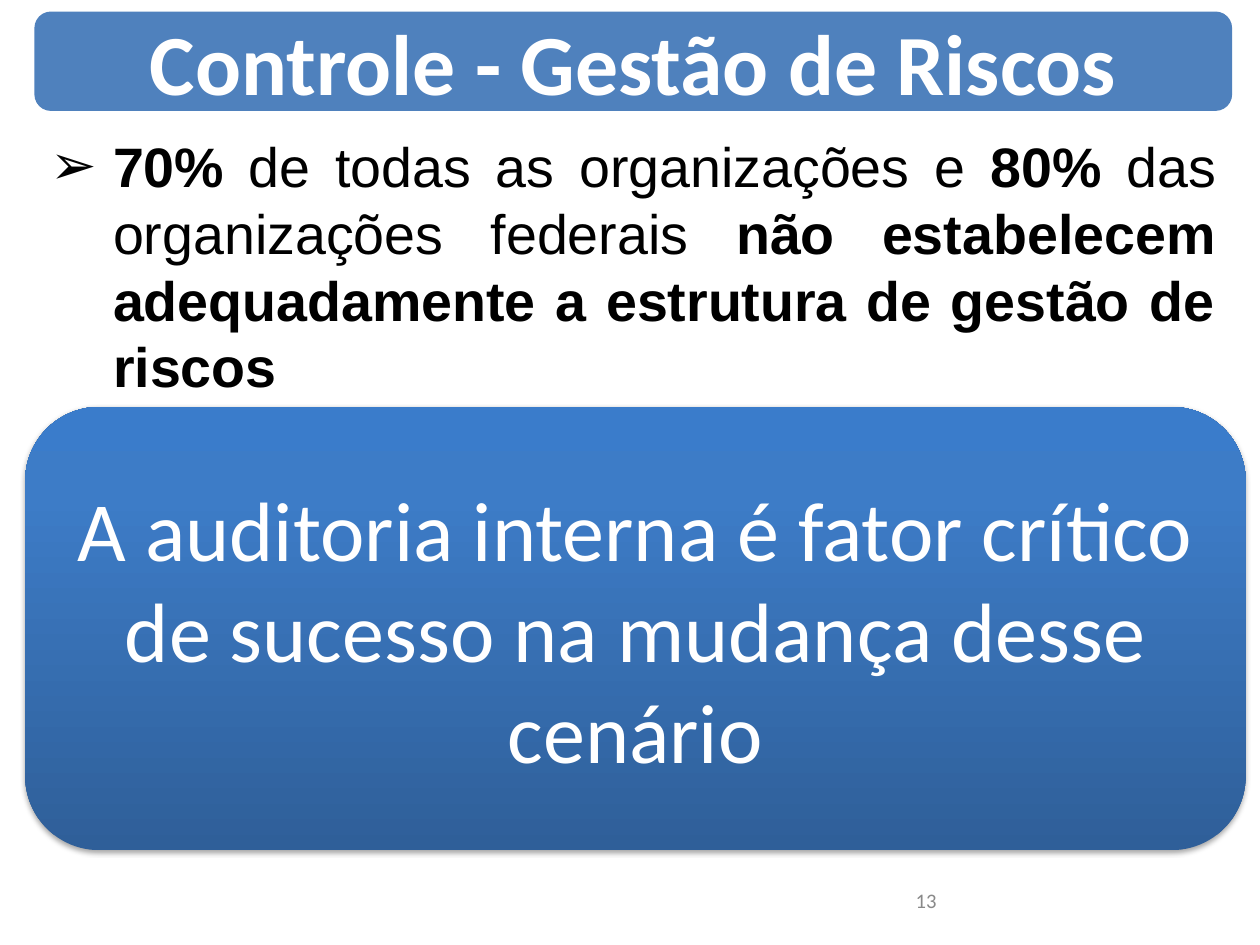
from dataclasses import dataclass

from lxml import etree
from pptx import Presentation
from pptx import util as u
from pptx.dml.color import RGBColor
from pptx.enum import shapes, text
from pptx.oxml.ns import qn


@dataclass(frozen=True)
class Theme:
    bar: str = "4F81BD"
    gradient: tuple = ((0, "2F5F99"), (80, "3D7CC7"), (100, "3A7CCB"))
    light: str = "FFFFFF"
    dark: str = "000000"
    muted: str = "898989"
    heading: str = "Calibri"
    body: str = "Arial"
    title_size: int = 54
    callout_size: int = 53
    body_size: int = 35
    number_size: int = 13


def add(parent, tag, **attrs):
    return etree.SubElement(parent, qn(tag), {k: str(v) for k, v in attrs.items()})


def write(tf, runs, font, size, color, align=text.PP_ALIGN.LEFT,
          anchor=text.MSO_ANCHOR.MIDDLE, bullet=None, indent=0, after=0):
    tf.word_wrap = True
    tf.vertical_anchor = anchor
    tf.margin_left = tf.margin_right = u.Inches(0.11)
    tf.margin_top = tf.margin_bottom = u.Inches(0.06)
    p = tf.paragraphs[0]
    p.alignment = align
    if after:
        p.space_after = u.Pt(after)
    if bullet:
        pPr = p._p.get_or_add_pPr()
        pPr.set("marL", str(u.Inches(indent)))
        pPr.set("indent", str(-u.Inches(indent)))
        add(pPr, "a:buFont", typeface=font)
        add(pPr, "a:buChar", char=bullet)
    for words, bold in runs:
        r = p.add_run()
        r.text = words
        r.font.name, r.font.size, r.font.bold = font, u.Pt(size), bold
        r.font.color.rgb = RGBColor.from_string(color)


class Deck:
    """Place styled elements on a slide divided into 100 columns and 100 rows."""

    def __init__(self, prs, theme):
        self.t = theme
        self.col, self.row = prs.slide_width / 100, prs.slide_height / 100
        self.s = prs.slides.add_slide(prs.slide_layouts[6])

    def box(self, left, top, width, height):
        return (round(left * self.col), round(top * self.row),
                round(width * self.col), round(height * self.row))

    def text(self, grid, runs, **fmt):
        sp = self.s.shapes.add_textbox(*self.box(*grid))
        write(sp.text_frame, runs, **fmt)

    def panel(self, grid, words, size, bold=False):
        sp = self.s.shapes.add_shape(
            shapes.MSO_SHAPE.ROUNDED_RECTANGLE, *self.box(*grid))
        sp.shadow.inherit = False
        sp.line.fill.background()
        sp.fill.solid()
        sp.fill.fore_color.rgb = RGBColor.from_string(self.t.bar)
        write(sp.text_frame, [(words, bold)], self.t.heading, size,
              self.t.light, align=text.PP_ALIGN.CENTER)
        return sp

    def callout(self, grid, words, size):
        sp = self.panel(grid, words, size)
        sp.fill.gradient()
        sp.fill.gradient_angle = 90
        spPr = sp._element.spPr
        stops = spPr.find(qn("a:gradFill")).find(qn("a:gsLst"))
        for gs in list(stops):
            stops.remove(gs)
        for pos, color in self.t.gradient:
            add(add(stops, "a:gs", pos=pos * 1000), "a:srgbClr", val=color)
        shadow = add(spPr.find(qn("a:effectLst")), "a:outerShdw",
                     blurRad=u.Pt(3.1), dist=u.Pt(1.8), dir=90 * 60000, rotWithShape=0)
        add(add(shadow, "a:srgbClr", val=self.t.dark), "a:alpha", val=35000)


def main():
    prs = Presentation()
    prs.slide_width, prs.slide_height = u.Cm(28), u.Cm(21)
    t = Theme()
    deck = Deck(prs, t)
    deck.text((71.67, 92.65, 23.31, 5.32), [("13", False)],
              font=t.heading, size=t.number_size, color=t.muted)
    deck.panel((2.73, 1.22, 95.06, 10.52), "Controle - Gestão de Riscos",
               t.title_size, bold=True)
    deck.text((2.99, 13.28, 94.53, 29.87), [
        ("70%", True),
        (" de todas as organizações e ", False),
        ("80%", True),
        (" das organizações federais ", False),
        ("não estabelecem adequadamente a estrutura de gestão de riscos", True),
    ], font=t.body, size=t.body_size, color=t.dark, align=text.PP_ALIGN.JUSTIFY,
        anchor=text.MSO_ANCHOR.TOP, bullet="➢", indent=0.55, after=26.5)
    deck.callout((2, 43.06, 96.86, 46.9),
                 "A auditoria interna é fator crítico de sucesso na mudança desse cenário",
                 t.callout_size)
    prs.save("out.pptx")


if __name__ == "__main__":
    main()
